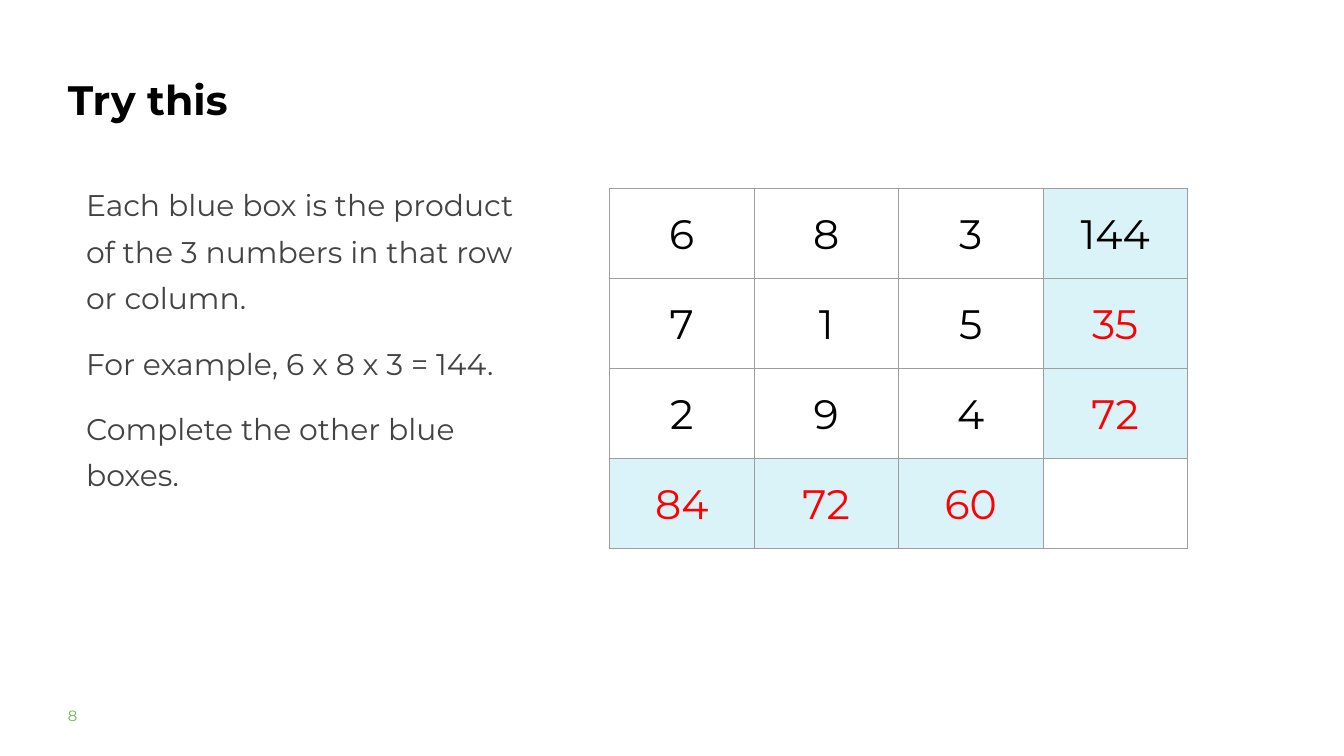
from lxml import etree
from pptx import Presentation
from pptx.dml.color import RGBColor
from pptx.enum.text import MSO_ANCHOR, MSO_AUTO_SIZE, PP_ALIGN
from pptx.oxml.ns import qn
from pptx.util import Inches, Pt

TOP, MIDDLE = MSO_ANCHOR.TOP, MSO_ANCHOR.MIDDLE
LEFT, CENTER = PP_ALIGN.LEFT, PP_ALIGN.CENTER
NO_FIT = MSO_AUTO_SIZE.NONE

TITLE = "Try this"
NUMBER = "8"
TASK = [
    "Each blue box is the product of the 3 numbers in that row or column.",
    "For example, 6 x 8 x 3 = 144.",
    "Complete the other blue boxes.",
]
GRID = [
    ["6", "8", "3", "144"],
    ["7", "1", "5", "35"],
    ["2", "9", "4", "72"],
    ["84", "72", "60", ""],
]
GIVEN = "144"
FONT = "Montserrat"
COLORS = {
    "black": "000000",
    "gray": "434343",
    "green": "65BE4B",
    "red": "FF0000",
    "blue": "D9F3F8",
    "line": "9E9E9E",
}
CELL_W, CELL_H = 2.15, 1.34


def color(name):
    return RGBColor.from_string(COLORS[name])


def write(para, text, size, tint, bold=False, align=LEFT, space=1.3):
    para.alignment = align
    para.line_spacing = space
    run = para.add_run()
    run.text = text
    font = run.font
    font.name, font.size, font.bold = FONT, Pt(size), bold
    font.color.rgb = color(tint)


def place(shape, left, top, width, height):
    shape.left, shape.top = Inches(left), Inches(top)
    shape.width, shape.height = Inches(width), Inches(height)
    frame = shape.text_frame
    frame.word_wrap = True
    frame.auto_size = NO_FIT
    frame.vertical_anchor = TOP
    return frame


def border(cell):
    props = cell._tc.get_or_add_tcPr()
    for side in ("lnL", "lnR", "lnT", "lnB"):
        line = etree.SubElement(props, qn("a:" + side), w=str(Pt(0.75)))
        fill = etree.SubElement(line, qn("a:solidFill"))
        etree.SubElement(fill, qn("a:srgbClr"), val=COLORS["line"])


def add_task(frame):
    for i, text in enumerate(TASK):
        para = frame.add_paragraph() if i else frame.paragraphs[0]
        props = para._p.get_or_add_pPr()
        props.set("marL", "0")
        props.set("indent", "0")
        etree.SubElement(props, qn("a:buNone"))
        para.space_before = Pt(20 if i else 0)
        write(para, text, 32, "gray")


def add_grid(slide):
    rows, cols = len(GRID), len(GRID[0])
    table = slide.shapes.add_table(
        rows, cols, Inches(9.07), Inches(2.8),
        Inches(cols * CELL_W), Inches(rows * CELL_H)).table
    table.first_row = table.horz_banding = False
    for col in table.columns:
        col.width = Inches(CELL_W)
    for r, row in enumerate(GRID):
        table.rows[r].height = Inches(CELL_H)
        for c, text in enumerate(row):
            cell = table.cell(r, c)
            cell.margin_left = cell.margin_right = Inches(0.07)
            cell.margin_top = cell.margin_bottom = 0
            cell.vertical_anchor = MIDDLE
            border(cell)
            blue = (r == rows - 1) != (c == cols - 1)
            if blue:
                cell.fill.solid()
                cell.fill.fore_color.rgb = color("blue")
            else:
                cell.fill.background()
            if text:
                tint = "red" if blue and text != GIVEN else "black"
                write(cell.text_frame.paragraphs[0], text, 44, tint,
                      align=CENTER, space=1.07)


def main():
    deck = Presentation()
    deck.slide_width, deck.slide_height = Inches(20), Inches(11.25)
    slide = deck.slides.add_slide(deck.slide_layouts[1])
    title = place(slide.shapes.title, 0.91, 0.84, 3.96, 0.98)
    write(title.paragraphs[0], TITLE, 44, "black", bold=True)
    page = place(slide.shapes.add_textbox(0, 0, 0, 0), 0.91, 10.38, 0.89, 0.42)
    write(page.paragraphs[0], NUMBER, 16, "green")
    add_grid(slide)
    add_task(place(slide.placeholders[1], 1.18, 2.57, 6.68, 5.78))
    deck.save("out.pptx")


if __name__ == "__main__":
    main()
